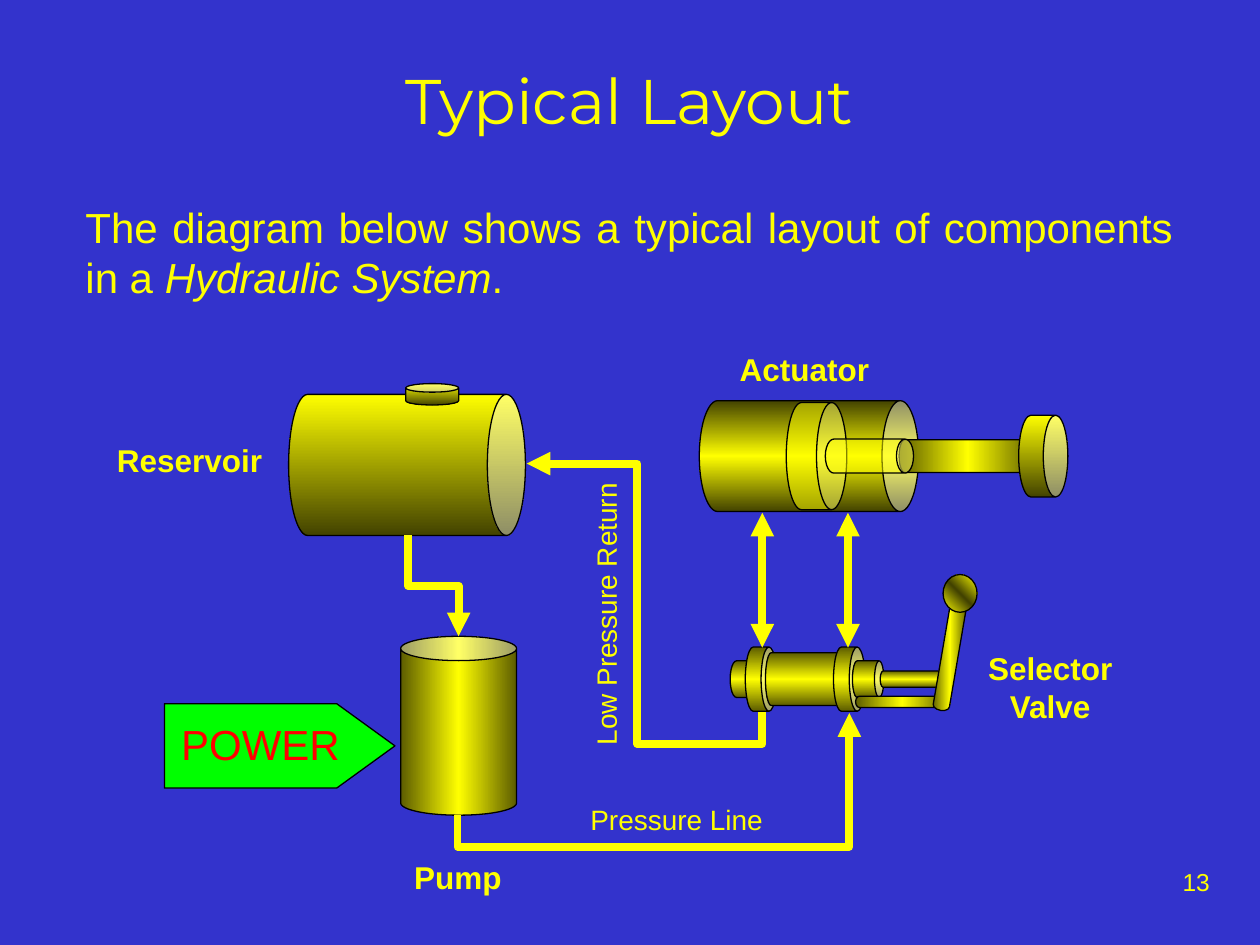
import pptx
import pptx.dml.color
import pptx.enum.shapes
import pptx.enum.text
import pptx.oxml
import pptx.oxml.ns
import pptx.util

SHAPES = pptx.enum.shapes.MSO_SHAPE
CONNECTORS = pptx.enum.shapes.MSO_CONNECTOR
ALIGN = pptx.enum.text.PP_ALIGN
YELLOW, RED, GREEN, BLACK, BLUE = "FFFF00", "FF0000", "00FF00", "000000", "3333CC"

METAL = ["5C5C00", YELLOW, "5C5C00"]
DARK_METAL = ["434300", YELLOW, "434300"]
SHADED = [YELLOW, "434300"]
BALL = [YELLOW, "434300", YELLOW]
VALVE_AXIS, ACTUATOR_AXIS = 5.39, 3.62

# shape, centre x, centre y, width, height, rotation, adjustment, gradient, angle
TANKS = [
    (SHAPES.CAN, 3.64, 5.76, 0.92, 1.42, 0, 0.21, METAL, 0),
    (SHAPES.CAN, 3.23, 3.69, 1.12, 1.88, 90, 0.27, SHADED, 90),
    (SHAPES.CAN, 3.43, 3.13, 0.42, 0.17, 0, 0.4, SHADED, 90),
]
VALVE = [
    (SHAPES.CAN, x, VALVE_AXIS, diameter, length, 90, bulge, METAL, 90)
    for x, diameter, length, bulge in [
        (5.92, 0.29, 0.25, 0.4), (6.04, 0.51, 0.25, 0.5), (6.42, 0.42, 0.69, 0.22),
        (6.74, 0.51, 0.25, 0.5), (6.89, 0.29, 0.25, 0.3), (7.27, 0.13, 0.57, 0.37)]
]
LEVER = [
    (SHAPES.CAN, 7.16, 5.57, 0.09, 0.74, 90, 0.71, METAL, 0),
    (SHAPES.CAN, 7.54, 5.2, 0.13, 0.89, 9.7, 0.59, METAL, 0),
    (SHAPES.OVAL, 7.62, 4.71, 0.27, 0.3, 0, None, BALL, 315),
]
ACTUATOR = [
    (SHAPES.CAN, x, ACTUATOR_AXIS, diameter, length, 90, bulge, colours, angle)
    for x, diameter, length, bulge, colours, angle in [
        (6.42, 0.88, 1.74, 0.33, DARK_METAL, 90), (7.68, 0.26, 1.09, 0.35, METAL, 0),
        (8.28, 0.65, 0.39, 0.5, SHADED, 90), (6.48, 0.85, 0.48, 0.5, None, 0),
        (6.9, 0.27, 0.7, 0.5, None, 0)]
]
POWER_ARROW = (SHAPES.PENTAGON, 2.22, 5.92, 1.83, 0.67, 0, 0.69, [GREEN], 0)

# left, top, width, height, rotation, flips, preset, adjustments
PIPES = [
    (3.04, 4.45, 0.8, 0.4, 270, ["flipH"], "bentConnector3", [0.5]),
    (4.78, 4.51, 0.81, 3.11, 90, ["flipH", "flipV"], "bentConnector3", [-0.31]),
    (4.13, 3.73, 1.97, 1.87, 270, ["flipV"], "bentConnector4", [-0.13, 0.53]),
]
PORTS = [6.05, 6.73]
PORT_BOTTOM, PORT_TOP = 5.14, 4.07

TITLE = "Typical Layout"
INTRO = [("The diagram below shows a typical layout of components in a ", False),
         ("Hydraulic System", True), (".", False)]
LABEL = {"size": 18, "bold": True}
NOTE = {"size": 16}
# text, left, top, width, height, rotation, alignment, font
LABELS = [
    ("13", 7.62, 6.83, 2.08, 0.5, 0, ALIGN.RIGHT, {"size": 14}),
    ("Reservoir", 0.59, 3.45, 1.83, 0.61, 0, ALIGN.CENTER, LABEL),
    ("Pump", 2.72, 6.76, 1.83, 0.61, 0, ALIGN.CENTER, LABEL),
    ("Selector Valve", 7.42, 5.1, 1.83, 0.61, 0, ALIGN.CENTER, LABEL),
    ("Actuator", 5.47, 2.73, 1.83, 0.61, 0, ALIGN.CENTER, LABEL),
    ("Low Pressure Return", 3.25, 4.57, 3.36, 0.61, 270, ALIGN.CENTER, NOTE),
    ("Pressure Line", 3.69, 6.32, 3.36, 0.61, 0, ALIGN.CENTER, NOTE),
    ("POWER", 1.34, 5.65, 1.83, 0.61, 0, ALIGN.JUSTIFY, {"size": 24, "color": RED}),
]


def length(inches):
    return pptx.util.Cm(inches * 2.54)


def rgb(colour):
    return pptx.dml.color.RGBColor.from_string(colour)


def add_run(paragraph, text, size, color=YELLOW, name="Arial", **style):
    run = paragraph.add_run()
    run.text = text
    run.font.color.rgb = rgb(color)
    for key, value in {"size": pptx.util.Pt(size), "name": name, **style}.items():
        setattr(run.font, key, value)


def add_label(slide, text, left, top, width, height, rotation, alignment, font):
    box = slide.shapes.add_textbox(*map(length, (left, top, width, height)))
    box.rotation = rotation
    box.text_frame.word_wrap = True
    paragraph = box.text_frame.paragraphs[0]
    paragraph.alignment = alignment
    runs = [(text, False)] if isinstance(text, str) else text
    for words, italic in runs:
        add_run(paragraph, words, italic=italic, **font)


def append_xml(parent, tag, content="", attributes=""):
    namespace = pptx.oxml.ns.nsdecls("a")
    element = pptx.oxml.parse_xml(f"<a:{tag} {namespace} {attributes}>{content}</a:{tag}>")
    parent.append(element)
    return element


def fill_gradient(shape, colours, angle):
    last = len(colours) - 1
    stops = "".join(f'<a:gs pos="{100000 * index // last}"><a:srgbClr val="{colour}"/></a:gs>'
                    for index, colour in enumerate(colours))
    properties = shape.fill._xPr
    gradient = append_xml(properties, "gradFill",
                          f'<a:gsLst>{stops}</a:gsLst><a:lin ang="{angle * 60000}" scaled="0"/>',
                          'rotWithShape="0"')
    properties.find(pptx.oxml.ns.qn("a:prstGeom")).addnext(gradient)


def add_part(slide, preset, x, y, width, height, rotation, adjustment, colours, angle):
    shape = slide.shapes.add_shape(
        preset, *map(length, (x - width / 2, y - height / 2, width, height)))
    shape.rotation = rotation
    if adjustment is not None:
        shape.adjustments[0] = adjustment
    if colours and len(colours) > 1:
        fill_gradient(shape, colours, angle)
    else:
        shape.fill.solid()
        shape.fill.fore_color.rgb = rgb(colours[0] if colours else YELLOW)
    if not colours:
        colour = shape.fill._xPr.find(".//" + pptx.oxml.ns.qn("a:srgbClr"))
        append_xml(colour, "alpha", attributes='val="50000"')
    shape.line.color.rgb = rgb(BLACK)
    shape.line.width = pptx.util.Pt(0.75)
    shape.shadow.inherit = False


def add_pipe(slide, kind, start_x, start_y, end_x, end_y, ends):
    pipe = slide.shapes.add_connector(kind, *map(length, (start_x, start_y, end_x, end_y)))
    pipe.line.color.rgb = rgb(YELLOW)
    pipe.line.width = pptx.util.Pt(4.5)
    for end in ends:
        append_xml(pipe.line._get_or_add_ln(), end, attributes='type="triangle"')
    append_xml(pipe._element.spPr, "effectLst")
    return pipe


def add_bent_pipe(slide, left, top, width, height, rotation, flips, preset, adjustments):
    pipe = add_pipe(slide, CONNECTORS.ELBOW, left, top, left + width, top + height, ["tailEnd"])
    properties = pipe._element.spPr
    frame = properties.find(pptx.oxml.ns.qn("a:xfrm"))
    for key, value in {"rot": rotation * 60000, **dict.fromkeys(flips, 1)}.items():
        frame.set(key, str(value))
    geometry = properties.find(pptx.oxml.ns.qn("a:prstGeom"))
    geometry.set("prst", preset)
    guides = geometry.find(pptx.oxml.ns.qn("a:avLst"))
    for number, value in enumerate(adjustments, 1):
        append_xml(guides, "gd", attributes=f'name="adj{number}" fmla="val {round(value * 100000)}"')


def add_title(slide):
    title = slide.shapes.title
    places = {"left": 0.58, "top": 0.16, "width": 8.83, "height": 1.25}
    for key, value in places.items():
        setattr(title, key, length(value))
    title.text_frame.vertical_anchor = pptx.enum.text.MSO_ANCHOR.MIDDLE
    paragraph = title.text_frame.paragraphs[0]
    paragraph.alignment = ALIGN.CENTER
    add_run(paragraph, TITLE, 36, name="Montserrat")


def main():
    """Build the hydraulic system layout slide."""
    presentation = pptx.Presentation()
    presentation.slide_width, presentation.slide_height = length(10), length(7.5)
    slide = presentation.slides.add_slide(presentation.slide_layouts[5])
    slide.background.fill.solid()
    slide.background.fill.fore_color.rgb = rgb(BLUE)
    add_title(slide)
    add_label(slide, INTRO, 0.58, 1.55, 8.83, 0.95, 0, ALIGN.JUSTIFY, {"size": 24})
    for part in [*TANKS, POWER_ARROW, *VALVE, *LEVER, *ACTUATOR]:
        add_part(slide, *part)
    for pipe in PIPES:
        add_bent_pipe(slide, *pipe)
    for x in PORTS:
        add_pipe(slide, CONNECTORS.STRAIGHT, x, PORT_BOTTOM, x, PORT_TOP, ["headEnd", "tailEnd"])
    for label in LABELS:
        add_label(slide, *label)
    presentation.save("out.pptx")


if __name__ == "__main__":
    main()
